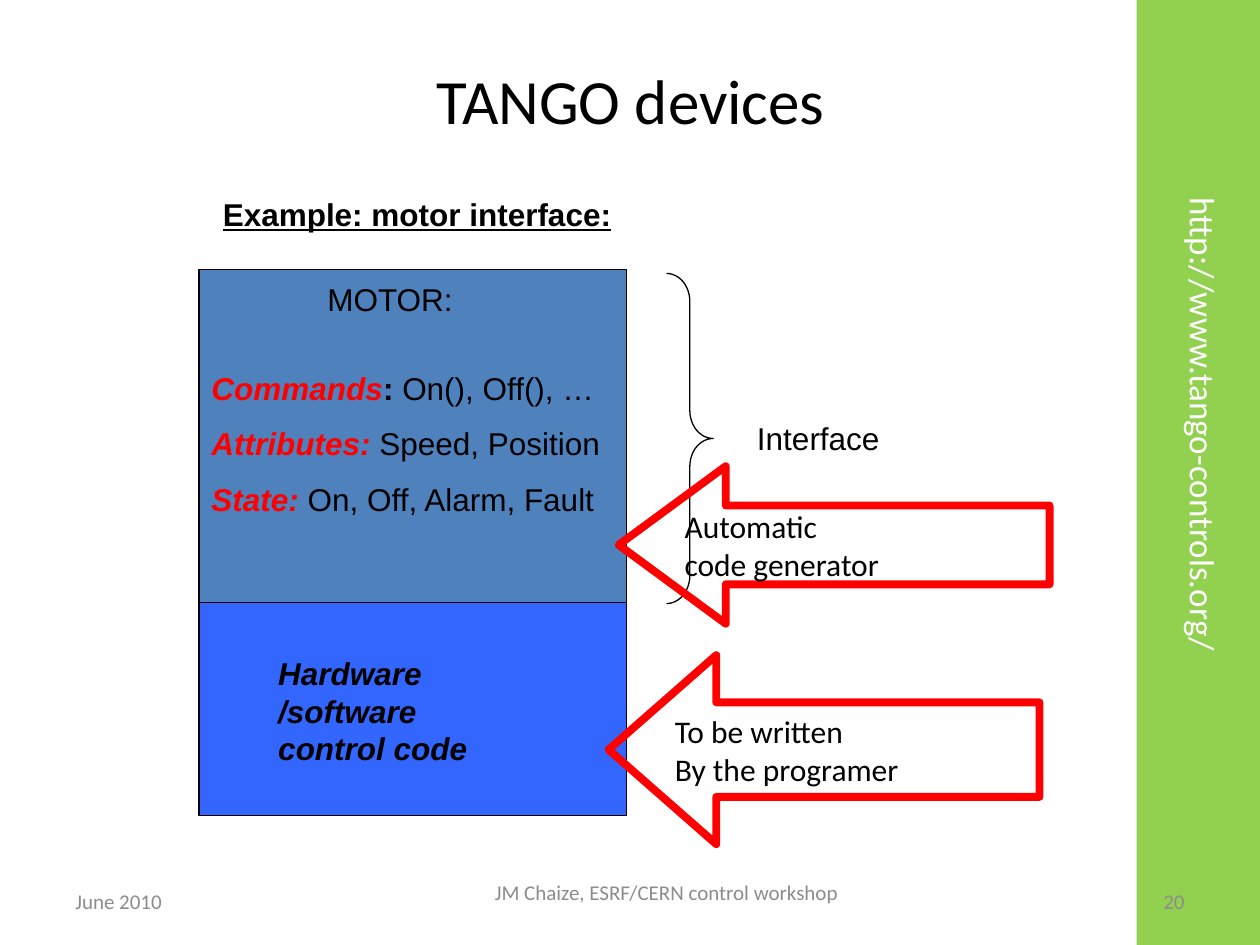
from dataclasses import dataclass

from pptx import Presentation
from pptx.dml.color import RGBColor
from pptx.enum.shapes import MSO_SHAPE
from pptx.enum.text import MSO_ANCHOR, PP_ALIGN
from pptx.util import Inches, Pt

RECTANGLE = MSO_SHAPE.RECTANGLE
RIGHT_BRACE = MSO_SHAPE.RIGHT_BRACE
LEFT_ARROW = MSO_SHAPE.LEFT_ARROW
TOP, MIDDLE = MSO_ANCHOR.TOP, MSO_ANCHOR.MIDDLE
LEFT, CENTER, RIGHT = PP_ALIGN.LEFT, PP_ALIGN.CENTER, PP_ALIGN.RIGHT

BLACK, WHITE, RED, GRAY = "000000", "FFFFFF", "FF0000", "8C8C8C"
GREEN, STEEL, BLUE = "92D050", "4F81BD", "3366FF"


@dataclass
class Box:
    left: float
    top: float
    width: float
    height: float

    def lengths(self):
        return [Inches(n) for n in (self.left, self.top, self.width, self.height)]


@dataclass
class Style:
    size: int = 18
    font: str = "Arial"
    color: str = BLACK
    bold: bool = False
    italic: bool = False
    underline: bool = False
    align: PP_ALIGN = LEFT
    anchor: MSO_ANCHOR = TOP
    wrap: bool = True


@dataclass
class Label:
    text: str
    box: Box
    style: Style


@dataclass
class Arrow:
    lines: list[str]
    box: Box
    head: float


@dataclass
class Member:
    name: str
    separator: str
    values: str


def rgb(color: str) -> RGBColor:
    return RGBColor.from_string(color)


def set_font(font, style: Style):
    font.name = style.font
    font.size = Pt(style.size)
    font.color.rgb = rgb(style.color)
    font.bold = style.bold
    font.italic = style.italic
    font.underline = style.underline


def write_lines(frame, lines: list[str], style: Style):
    frame.word_wrap = style.wrap
    frame.vertical_anchor = style.anchor
    for index, line in enumerate(lines):
        paragraph = frame.add_paragraph() if index else frame.paragraphs[0]
        paragraph.text = line
        paragraph.alignment = style.align
        set_font(paragraph.font, style)


def add_label(slide, label: Label):
    shape = slide.shapes.add_textbox(*label.box.lengths())
    write_lines(shape.text_frame, [label.text], label.style)
    return shape


def add_shape(slide, kind, box: Box, fill="", line="", weight=0.75, adjustments=()):
    shape = slide.shapes.add_shape(kind, *box.lengths())
    shape.shadow.inherit = False
    if fill:
        shape.fill.solid()
        shape.fill.fore_color.rgb = rgb(fill)
    else:
        shape.fill.background()
    if line:
        shape.line.color.rgb = rgb(line)
        shape.line.width = Pt(weight)
    else:
        shape.line.fill.background()
    for index, value in enumerate(adjustments):
        shape.adjustments[index] = value
    return shape


def add_arrow(slide, arrow: Arrow):
    shape = add_shape(slide, LEFT_ARROW, arrow.box, line=RED, weight=4.5,
                      adjustments=(0.5, arrow.head))
    write_lines(shape.text_frame, arrow.lines,
                Style(font="Calibri", anchor=MIDDLE, wrap=False))


def add_members(slide, box: Box, members: list[Member]):
    frame = slide.shapes.add_textbox(*box.lengths()).text_frame
    frame.word_wrap = True
    for index, member in enumerate(members):
        paragraph = frame.add_paragraph() if index else frame.paragraphs[0]
        if index:
            paragraph.space_before = Pt(10)
        parts = [
            (member.name, Style(color=RED, bold=True, italic=True)),
            (member.separator, Style(bold=True)),
            (member.values, Style()),
        ]
        for text, style in parts:
            if text:
                run = paragraph.add_run()
                run.text = text
                set_font(run.font, style)


def footer(align: PP_ALIGN) -> Style:
    return Style(size=12, font="Calibri", color=GRAY, align=align, anchor=MIDDLE)


LABELS = [
    Label("June 2010", Box(0.5, 6.95, 2.33, 0.4), footer(LEFT)),
    Label("JM Chaize, ESRF/CERN control workshop", Box(3, 6.83, 4.58, 0.5), footer(CENTER)),
    Label("20", Box(7.17, 6.95, 2.33, 0.4), footer(RIGHT)),
    Label("Example: motor interface:", Box(1.67, 1.5, 6.2, 0.5),
          Style(bold=True, underline=True)),
    Label("MOTOR:", Box(2.5, 2.17, 1.53, 0.5), Style(wrap=False)),
    Label("Interface", Box(5.91, 3.28, 1.5, 0.5), Style(wrap=False)),
    Label("Hardware /software control code", Box(2.11, 5.14, 2.02, 1.01),
          Style(bold=True, italic=True)),
]
MEMBERS = [
    Member("Commands", ": ", "On(), Off(), …"),
    Member("Attributes: ", "", "Speed, Position"),
    Member("State:", "", " On, Off, Alarm, Fault"),
]
ARROWS = [
    Arrow(["Automatic", "code generator"], Box(4.91, 3.7, 3.42, 1.25), 0.68),
    Arrow(["To be written", "By the programer"], Box(4.83, 5.2, 3.42, 1.5), 0.57),
]


def main():
    presentation = Presentation()
    presentation.slide_width, presentation.slide_height = Inches(10), Inches(7.5)
    slide = presentation.slides.add_slide(presentation.slide_layouts[5])

    title = slide.shapes.title
    title.left, title.top, title.width, title.height = Box(1.67, 0, 6.67, 1.58).lengths()
    write_lines(title.text_frame, ["TANGO devices"],
                Style(size=36, font="Calibri", align=CENTER, anchor=MIDDLE))

    add_shape(slide, RECTANGLE, Box(9.02, 0, 0.98, 7.5), GREEN)
    address = add_label(slide, Label("http://www.tango-controls.org/", Box(7.58, 3.22, 3.94, 0.44),
                                     Style(size=20, font="Calibri", color=WHITE)))
    address.rotation = 90

    add_shape(slide, RECTANGLE, Box(1.58, 2.14, 3.39, 3.06), STEEL, BLACK)
    add_shape(slide, RECTANGLE, Box(1.58, 4.78, 3.39, 1.69), BLUE, BLACK)
    add_shape(slide, RIGHT_BRACE, Box(5.29, 2.17, 0.37, 2.62), line=BLACK,
              adjustments=(0.6, 0.5))
    for label in LABELS:
        add_label(slide, label)
    add_members(slide, Box(1.58, 2.88, 3.39, 1.76), MEMBERS)
    for arrow in ARROWS:
        add_arrow(slide, arrow)

    presentation.save("out.pptx")


if __name__ == "__main__":
    main()
